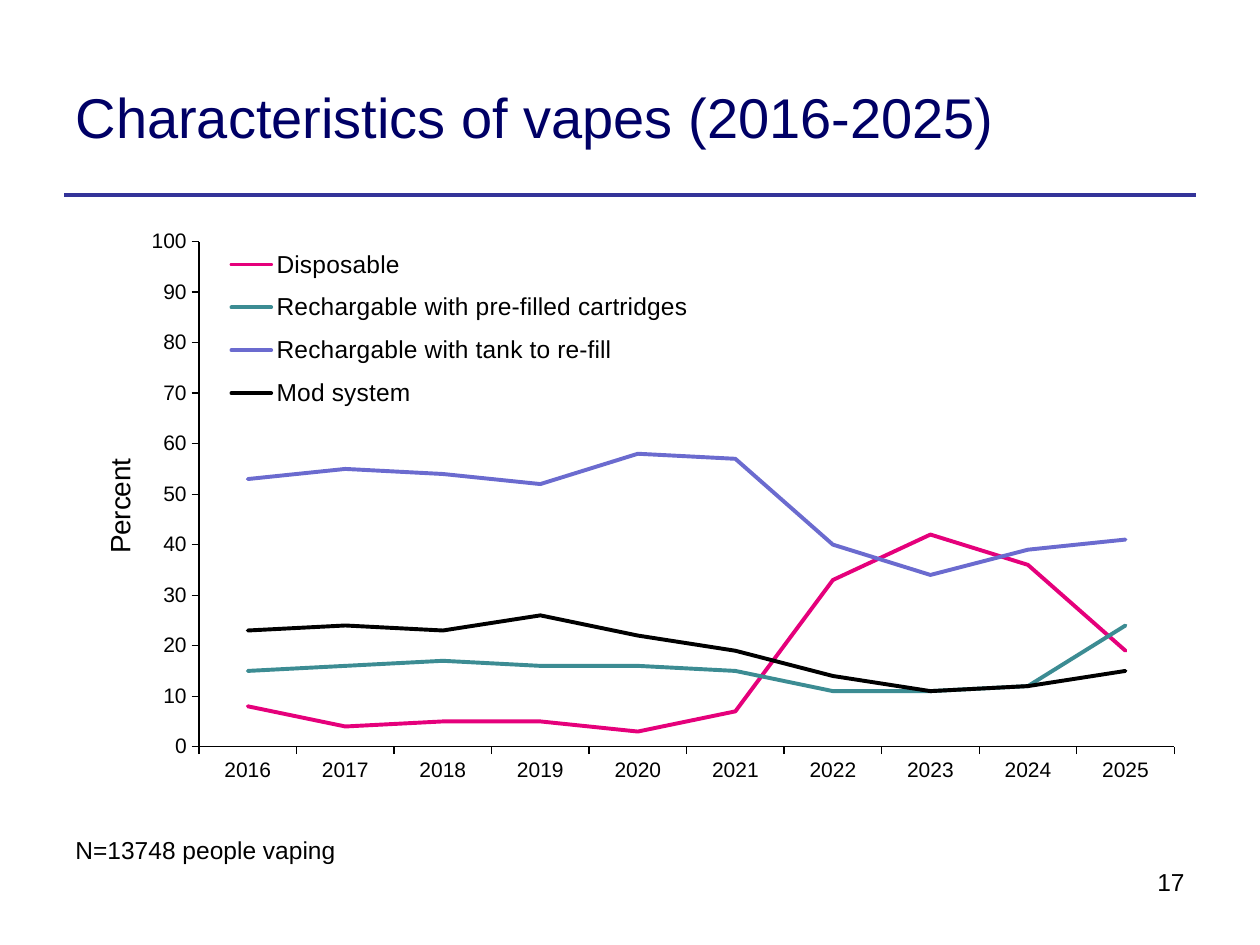
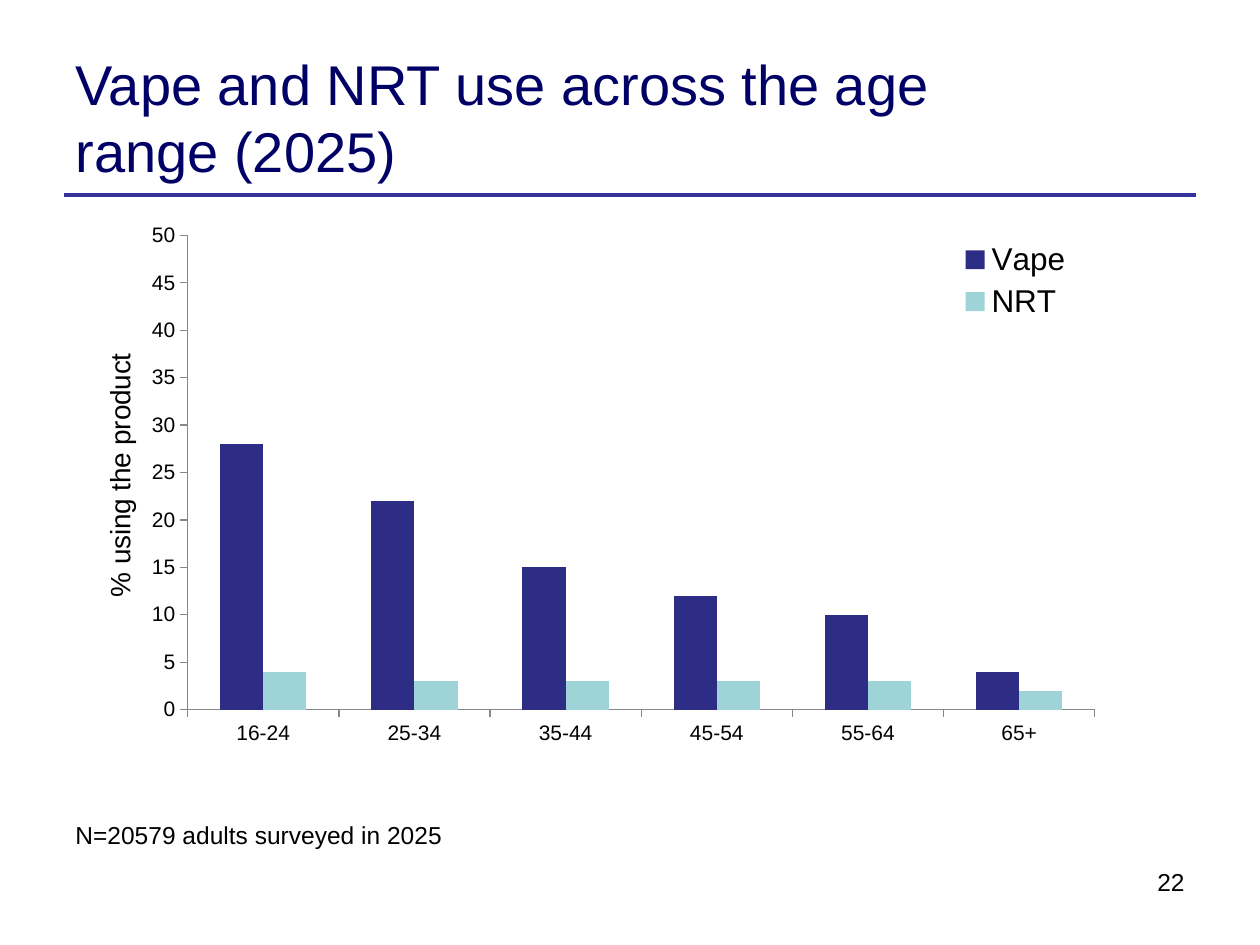
from lxml.etree import SubElement
from pptx import Presentation
from pptx.chart.data import CategoryChartData
from pptx.dml.color import RGBColor
from pptx.enum.chart import XL_CHART_TYPE, XL_LEGEND_POSITION, XL_TICK_MARK
from pptx.enum.shapes import MSO_CONNECTOR
from pptx.enum.text import MSO_ANCHOR, MSO_AUTO_SIZE, PP_ALIGN
from pptx.oxml import parse_xml
from pptx.oxml.ns import nsdecls, qn
from pptx.util import Inches, Pt

WIDTH, HEIGHT = 10, 7.5
MARGIN = 0.5
CONTENT_WIDTH = WIDTH - 2 * MARGIN
FONT = "Arial"
BLACK, TITLE_BLUE, RULE_BLUE, AXIS_GREY = "000000", "000066", "333399", "878787"


def color(hex_string):
    return RGBColor.from_string(hex_string)


def format_font(font, size, hex_color=BLACK):
    font.name = FONT
    font.size = Pt(size)
    font.bold = False
    font.color.rgb = color(hex_color)


def format_line(line, hex_color, width):
    line.color.rgb = color(hex_color)
    line.width = Pt(width)


def add_title(slide, text):
    title = slide.shapes.title
    title.left, title.top = Inches(MARGIN), Inches(0.3)
    title.width, title.height = Inches(7.89), Inches(1.25)
    frame = title.text_frame
    frame.text = text
    frame.auto_size = MSO_AUTO_SIZE.NONE
    frame.vertical_anchor = MSO_ANCHOR.MIDDLE
    paragraph = frame.paragraphs[0]
    paragraph.alignment = PP_ALIGN.LEFT
    format_font(paragraph.runs[0].font, 32, TITLE_BLUE)


def add_rule(slide):
    rule = slide.shapes.add_connector(
        MSO_CONNECTOR.STRAIGHT,
        Inches(MARGIN + 0.01), Inches(1.55), Inches(WIDTH - MARGIN - 0.01), Inches(1.55))
    format_line(rule.line, RULE_BLUE, 2.25)
    SubElement(rule._element.spPr, qn("a:effectLst"))


def add_text(slide, text, left, top, width, height, align=PP_ALIGN.LEFT, wrap=True):
    box = slide.shapes.add_textbox(Inches(left), Inches(top), Inches(width), Inches(height))
    frame = box.text_frame
    frame.word_wrap = wrap
    paragraph = frame.paragraphs[0]
    paragraph.text = text
    paragraph.alignment = align
    format_font(paragraph.runs[0].font, 14)


def place(element, index, left, top, width=None, height=None, inner=False):
    for old_layout in element.findall(qn("c:layout")):
        element.remove(old_layout)
    target = '<c:layoutTarget val="inner"/>' if inner else ""
    modes = '<c:xMode val="edge"/><c:yMode val="edge"/>'
    shares = zip("xywh", (left, top, width, height))
    values = "".join(f'<c:{tag} val="{share}"/>' for tag, share in shares if share is not None)
    element.insert(index, parse_xml(
        f'<c:layout {nsdecls("c")}><c:manualLayout>{target}{modes}{values}'
        "</c:manualLayout></c:layout>"))


def add_chart(slide, chart_type, top, height, categories, series, plot_area):
    data = CategoryChartData(number_format="0")
    data.categories = categories
    for name, values, _ in series:
        data.add_series(name, values)
    chart = slide.shapes.add_chart(
        chart_type, Inches(MARGIN), Inches(top), Inches(CONTENT_WIDTH), Inches(height), data).chart
    format_font(chart.font, 12)
    chart.has_title = False
    chart.plots[0].vary_by_categories = False
    place(chart._chartSpace.chart.plotArea, 0, *plot_area, inner=True)
    return chart


def format_axes(chart, title, maximum, step, line_color, title_position):
    value_axis = chart.value_axis
    value_axis.minimum_scale, value_axis.maximum_scale = 0, maximum
    value_axis.major_unit = step
    value_axis.has_major_gridlines = False
    for axis in (chart.category_axis, value_axis):
        axis.major_tick_mark = XL_TICK_MARK.OUTSIDE
        axis.minor_tick_mark = XL_TICK_MARK.NONE
        format_font(axis.tick_labels.font, 12)
        format_line(axis.format.line, line_color, 0.75)
    axis_title = value_axis.axis_title
    frame = axis_title.text_frame
    frame.text = title
    format_font(frame.paragraphs[0].runs[0].font, 16)
    body = frame._txBody.bodyPr
    body.set("rot", "-5400000")
    body.set("vert", "horz")
    place(axis_title._element, 1, *title_position)


def add_legend(chart, position, size, area):
    chart.has_legend = True
    legend = chart.legend
    legend.position = position
    legend.include_in_layout = False
    format_font(legend.font, size)
    place(legend._element, 1, *area)


def add_line_chart(slide):
    series = [
        ("Disposable", (8, 4, 5, 5, 3, 7, 33, 42, 36, 19), "E5007B"),
        ("Rechargable with pre-filled cartridges",
         (15, 16, 17, 16, 16, 15, 11, 11, 12, 24), "3C8C93"),
        ("Rechargable with tank to re-fill",
         (53, 55, 54, 52, 58, 57, 40, 34, 39, 41), "6B6BCF"),
        ("Mod system", (23, 24, 23, 26, 22, 19, 14, 11, 12, 15), BLACK),
    ]
    years = [str(year) for year in range(2016, 2026)]
    chart = add_chart(slide, XL_CHART_TYPE.LINE, 1.72, 4.95, years, series,
                      (0.12, 0.04, 0.86, 0.81))
    for line, (_, _, hex_color) in zip(chart.plots[0].series, series):
        line.smooth = False
        format_line(line.format.line, hex_color, 2.25)
        line.format.line._ln.set("cap", "rnd")
    format_axes(chart, "Percent", 100, 10, BLACK, (0.03, 0.38))
    add_legend(chart, XL_LEGEND_POSITION.BOTTOM, 14, (0.14, 0.03, 0.42, 0.3))


def add_column_chart(slide):
    series = [
        ("Vape", (28, 22, 15, 12, 10, 4), "2D2D86"),
        ("NRT", (4, 3, 3, 3, 3, 2), "9ED3D7"),
    ]
    ages = ["16-24", "25-34", "35-44", "45-54", "55-64", "65+"]
    chart = add_chart(slide, XL_CHART_TYPE.COLUMN_CLUSTERED, 1.69, 4.48, ages, series,
                      (0.11, 0.04, 0.8, 0.84))
    plot = chart.plots[0]
    plot.gap_width = 150
    plot.overlap = 0
    for columns, (_, _, hex_color) in zip(plot.series, series):
        columns.format.fill.solid()
        columns.format.fill.fore_color.rgb = color(hex_color)
    format_axes(chart, "% using the product", 50, 5, AXIS_GREY, (0.03, 0.24))
    add_legend(chart, XL_LEGEND_POSITION.RIGHT, 18, (0.78, 0.04, 0.12, 0.16))


def add_chart_slide(presentation, title, page_number, draw_chart):
    slide = presentation.slides.add_slide(presentation.slide_layouts[5])
    add_rule(slide)
    add_title(slide, title)
    draw_chart(slide)
    add_text(slide, page_number, 6.73, 6.83, 2.77, 0.52, align=PP_ALIGN.RIGHT)
    return slide


def main():
    presentation = Presentation()
    presentation.slide_width, presentation.slide_height = Inches(WIDTH), Inches(HEIGHT)
    slide = add_chart_slide(
        presentation, "Characteristics of vapes (2016-2025)", "17", add_line_chart)
    add_text(slide, "N=13748 people vaping", MARGIN, 6.58, 8.51, 0.34)
    slide = add_chart_slide(
        presentation, "Vape and NRT use across the age range (2025)", "22", add_column_chart)
    add_text(slide, "N=20579 adults surveyed in 2025", MARGIN, 6.46, 3.12, 0.34, wrap=False)
    presentation.save("out.pptx")


if __name__ == "__main__":
    main()
